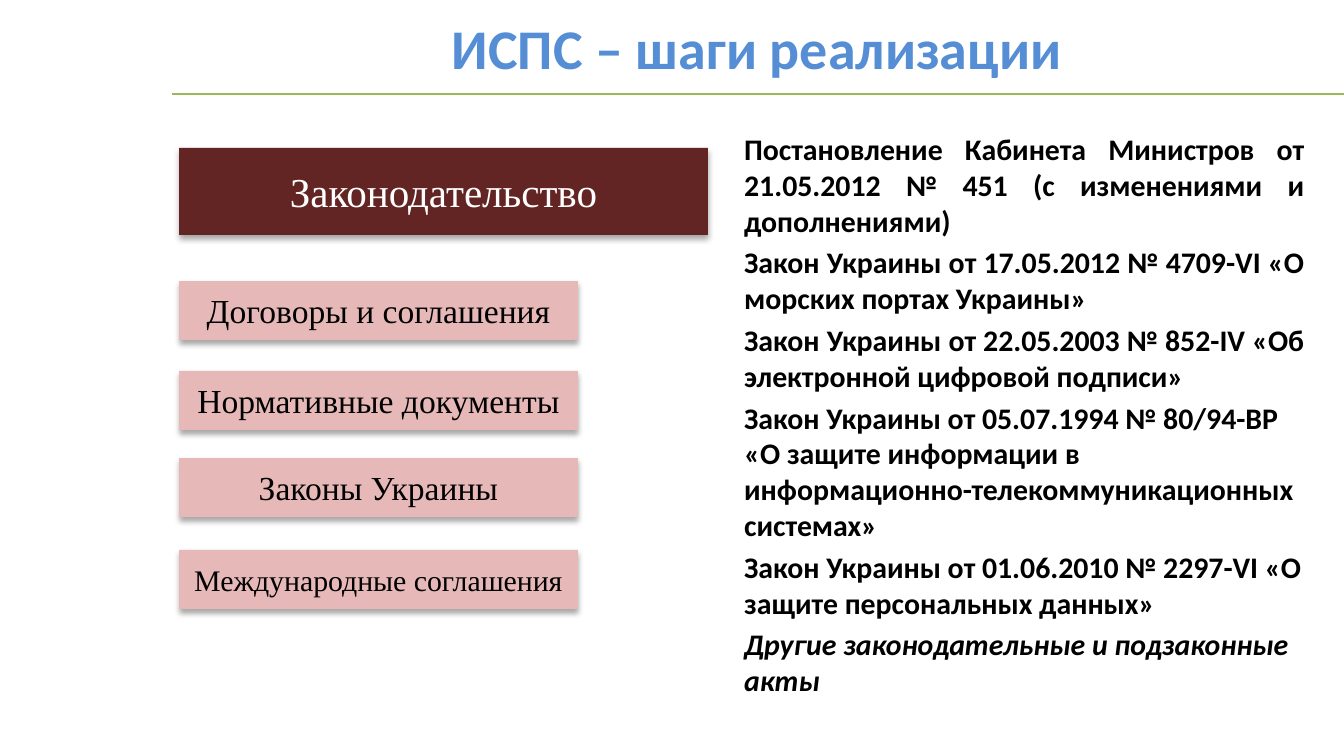
import pptx
import pptx.dml.color
import pptx.enum.shapes
import pptx.enum.text
import pptx.oxml
import pptx.oxml.ns
import pptx.util

PX_PER_INCH = 134.4
COLORS = {
    "title": "558ED5", "rule": "98B955", "header": "632523",
    "step": "E6B9B8", "light": "FFFFFF", "dark": "000000",
}
ALIGN = pptx.enum.text.PP_ALIGN
ANCHOR = pptx.enum.text.MSO_ANCHOR

STEPS = [  # label, top within the column, font size
    ("Договоры и соглашения", 133, 18),
    ("Нормативные документы", 223, 18),
    ("Законы Украины", 310, 18),
    ("Международные соглашения", 402, 16),
]
LAWS = [  # text, alignment, italic
    ("Постановление Кабинета Министров от 21.05.2012 № 451 (с изменениями и дополнениями)",
     ALIGN.JUSTIFY, False),
    ("Закон Украины от 17.05.2012 № 4709-VI «О морских портах Украины»", ALIGN.JUSTIFY, False),
    ("Закон Украины от 22.05.2003 № 852-IV «Об электронной цифровой подписи»",
     ALIGN.JUSTIFY, False),
    ("Закон Украины от 05.07.1994 № 80/94-ВР «О защите информации в "
     "информационно-телекоммуникационных системах»", ALIGN.LEFT, False),
    ("Закон Украины от 01.06.2010 № 2297-VI «О защите персональных данных»", ALIGN.LEFT, False),
    ("Другие законодательные и подзаконные акты", ALIGN.LEFT, True),
]


def px(length):
    return pptx.util.Emu(round(length * 914400 / PX_PER_INCH))


def rgb(name):
    return pptx.dml.color.RGBColor.from_string(COLORS[name])


def add_run(paragraph, text, size, font, color, bold=False, italic=False):
    run = paragraph.add_run()
    run.text = text
    run.font.size = pptx.util.Pt(size)
    run.font.name = font
    run.font.color.rgb = rgb(color)
    run.font.bold = bold
    run.font.italic = italic


def add_effects(shape, content=""):
    """Replace the theme shadow by the given effects, or by none."""
    shape._element.spPr.append(pptx.oxml.parse_xml(
        f'<a:effectLst {pptx.oxml.ns.nsdecls("a")}>{content}</a:effectLst>'))


def add_block(slide, box, label, size, fill, color):
    block = slide.shapes.add_shape(
        pptx.enum.shapes.MSO_SHAPE.RECTANGLE, *map(px, box))
    block.fill.solid()
    block.fill.fore_color.rgb = rgb(fill)
    block.line.fill.background()
    add_effects(block, '<a:outerShdw blurRad="40000" dist="23000" dir="5400000" rotWithShape="0">'
                       '<a:srgbClr val="000000"><a:alpha val="35000"/></a:srgbClr></a:outerShdw>')
    frame = block.text_frame
    frame.word_wrap = True
    frame.vertical_anchor = ANCHOR.MIDDLE
    frame.paragraphs[0].alignment = ALIGN.CENTER
    add_run(frame.paragraphs[0], label, size, "Times New Roman", color)


def add_heading(slide, box):
    left, top, width, height = box
    title = slide.shapes.title
    title.left, title.top, title.width, title.height = map(px, box)
    frame = title.text_frame
    frame.word_wrap = True
    frame.vertical_anchor = ANCHOR.TOP
    frame.paragraphs[0].alignment = ALIGN.CENTER
    add_run(frame.paragraphs[0], "ИСПС – шаги реализации", 30, "Calibri", "title", bold=True)

    # Rule under the title, running to the slide edge
    rule_y = px(top + height + 5)
    rule = slide.shapes.add_connector(
        pptx.enum.shapes.MSO_CONNECTOR.STRAIGHT, px(left - 3), rule_y, px(1344), rule_y)
    rule.line.color.rgb = rgb("rule")
    rule.line.width = pptx.util.Pt(0.75)
    add_effects(rule)


def add_steps(slide, box):
    left, top, width, height = box
    add_block(slide, (left, top, width, 87), "Законодательство", 22, "header", "light")
    for label, offset, size in STEPS:
        add_block(slide, (left, top + offset, 399, 59), label, size, "step", "dark")


def add_laws(slide, box):
    frame = slide.shapes.add_textbox(*map(px, box)).text_frame
    frame.word_wrap = True
    for index, (text, alignment, italic) in enumerate(LAWS):
        paragraph = frame.add_paragraph() if index else frame.paragraphs[0]
        paragraph.alignment = alignment
        if index:
            paragraph.space_before = pptx.util.Pt(3.2)
        add_run(paragraph, text, 16, "Calibri", "dark", bold=True, italic=italic)


def main():
    presentation = pptx.Presentation()
    presentation.slide_width = px(1344)
    presentation.slide_height = px(756)
    slide = presentation.slides.add_slide(presentation.slide_layouts[5])
    add_heading(slide, (175, 7, 1164, 82))
    add_steps(slide, (179, 148, 529, 461))
    add_laws(slide, (731, 124, 587, 540))
    presentation.save("out.pptx")


if __name__ == "__main__":
    main()
